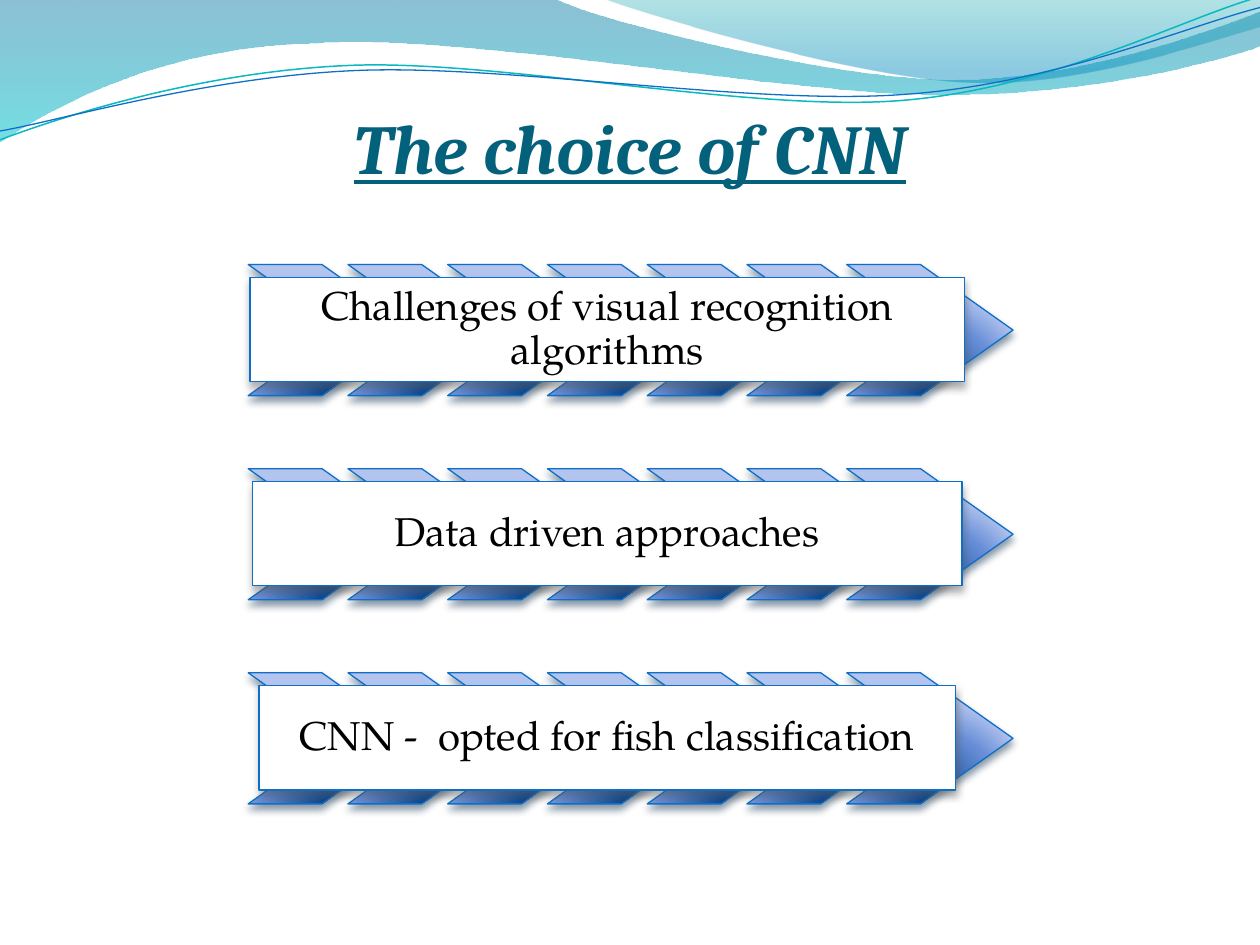
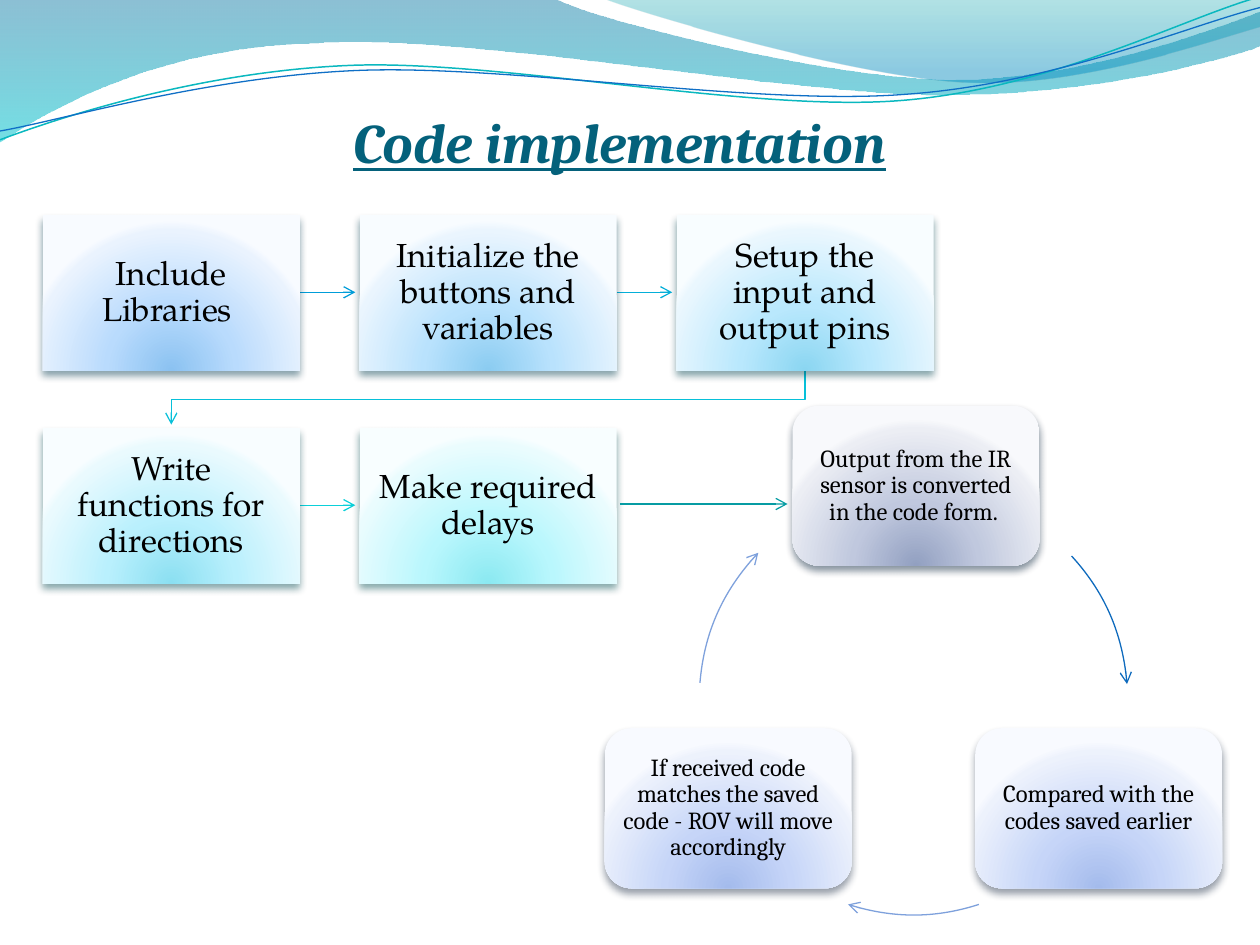
from math import cos, radians, sin, tan

from lxml.etree import SubElement
from pptx import Presentation
from pptx.dml.color import RGBColor
from pptx.enum.shapes import MSO_CONNECTOR, MSO_SHAPE
from pptx.enum.text import MSO_ANCHOR, MSO_AUTO_SIZE, PP_ALIGN
from pptx.oxml.ns import qn
from pptx.util import Inches, Pt

BLUE = "0F6FC6"
TEAL = "04617B"
SERIF = "Cambria"
BOOK = "TeX Gyre Pagella"
STEEL = [(0, "003D87"), (68, "668DD7"), (100, "B3C4EF")]

BANDS = [
    ((-0.01, -0.01, 10.02, 1.14),
     [(0, 0), (4.4, -0.01), (4.76, 0.17, 6.64, 0.63, 7.58, 0.63),
      (8.53, 0.63, 9.58, 0.26, 10, 0.09), (10.01, 0.36),
      (9.83, 0.44, 8.7, 0.76, 7.46, 0.75), (6.22, 0.75, 3.82, 0.28, 2.57, 0.34),
      (1.29, 0.36, 0.46, 0.83, -0.01, 1.13), (0, 0)],
     [(0, "0074A1", 45), (100, "00C6CF", 55)]),
    ((4.79, -0.01, 5.21, 0.7),
     [(4.79, -0.01), (5.09, 0.11, 6.82, 0.62, 7.69, 0.65),
      (8.56, 0.69, 9.61, 0.32, 10, 0.21), (10, 0), (4.79, -0.01)],
     [(0, "00A1A9", 30), (80, "008BBF", 45)]),
]
WAVES = [
    ((0, -0.02, 9.98, 1.13),
     [(0, 1.11), (0.48, 0.93, 1.58, 0.57, 2.77, 0.52),
      (3.95, 0.47, 5.93, 0.89, 7.13, 0.8), (8.33, 0.71, 9.38, 0.15, 9.98, -0.02)],
     "0AB8BF", 0.85),
    ((0, 0.06, 10, 0.98),
     [(0, 1.04), (0.47, 0.96, 1.64, 0.61, 2.83, 0.56),
      (4.03, 0.51, 5.97, 0.84, 7.17, 0.75), (8.36, 0.67, 9.41, 0.21, 10, 0.06)],
     BLUE, 0.75),
]
ROWS = [("Challenges of visual recognition algorithms", 5.67),
        ("Data driven approaches", 5.63),
        ("CNN -  opted for fish classification", 5.53)]
STEPS = [
    ("Include Libraries ", ("8BC2F1", "B9DBFD", "EAF3FE", "F8FBFF"), "00374C", "009DD9"),
    ("Initialize the buttons and variables",
     ("8BCCF1", "B9E2FD", "EAF5FE", "F8FCFF"), "003C4D", "04AFD9"),
    ("Setup the input and output pins",
     ("8BD6F1", "B9E8FD", "EAF7FE", "F8FDFF"), "00424E", "07C0D9"),
    ("Write functions for directions",
     ("8BDFF1", "B9F0FD", "EAFAFE", "F8FDFF"), "01464E", "0BD0D9"),
    ("Make required delays", ("8BE9F1", "B9F7FD", "EAFCFE", "F8FEFF"), "024B4E", None),
]
PALE = ("A4BBEC", "C6D5F8", "EDF2FC", "F8FAFF")
STAGES = [
    ("Output from the IR sensor is converted in the code form. ",
     ("92A0C1", "C0C8DE", "ECEEF4", "F8F9FC"), "031D35", (0.74, -0.64),
     (-42.4, -4.4), "0E6ABD"),
    ("Compared with the codes saved earlier", PALE, "26354C", (2.19, 1.92),
     (72.2, 107.8), "7EA1DC"),
    ("If received code matches the saved code - ROV will move accordingly",
     PALE, "26354C", (-0.75, 1.92), (184.7, 223.6), "7EA1DC"),
]


def rgb(code):
    """Turn a hex string into a colour."""
    return RGBColor.from_string(code)


def tint(parent, code, alpha=100):
    """Add a colour with its opacity to an XML element."""
    node = SubElement(parent, qn("a:srgbClr"), val=code)
    if alpha < 100:
        SubElement(node, qn("a:alpha"), val=str(alpha * 1000))


def blend(shape, stops, glow=True):
    """Fill a shape with a glow from below or a downward gradient."""
    shape.fill.gradient()
    node = shape.element.spPr.find(qn("a:gradFill"))
    node.clear()
    node.set("rotWithShape", "1")
    group = SubElement(node, qn("a:gsLst"))
    for place, *colour in stops:
        tint(SubElement(group, qn("a:gs"), pos=str(place * 1000)), *colour)
    if glow:
        way = SubElement(node, qn("a:path"), path="circle")
        SubElement(way, qn("a:fillToRect"), l="50000", t="130000", r="50000", b="-30000")
    else:
        SubElement(node, qn("a:lin"), ang="5400000", scaled="1")


def soft(stops):
    """Place four pale colours along a glow."""
    return list(zip((0, 43, 93, 100), stops))


def shade(shape, code):
    """Give a shape a soft shadow below it."""
    shape.shadow.inherit = False
    group = shape.element.spPr.find(qn("a:effectLst"))
    node = SubElement(group, qn("a:outerShdw"), blurRad=str(Pt(4.5)), dist=str(Pt(3)),
                      dir="5400000", algn="ctr", rotWithShape="0")
    tint(node, code, 48)


def stroke(shape, code, width=0.75, arrow=False):
    """Set the line of a shape, with an arrowhead if asked."""
    shape.line.color.rgb = rgb(code)
    shape.line.width = Pt(width)
    if arrow:
        SubElement(shape.element.spPr.find(qn("a:ln")), qn("a:tailEnd"), type="arrow")


def outline(slide, box, parts, close=False):
    """Draw line ends and cubic curves, given in inches, within a box."""
    left, top, width, height = [Inches(v) for v in box]
    maker = slide.shapes.build_freeform(left, top)
    maker.add_line_segments([(left + width, top + height)], close=False)
    shape = maker.convert_to_shape()
    shape.shadow.inherit = False
    shape.fill.background()
    route = next(shape.element.iter(qn("a:path")))
    for node in list(route):
        route.remove(node)
    for i, part in enumerate(parts):
        kind = "a:cubicBezTo" if len(part) == 6 else "a:lnTo" if i else "a:moveTo"
        node = SubElement(route, qn(kind))
        for x, y in zip(part[::2], part[1::2]):
            SubElement(node, qn("a:pt"), x=str(Inches(x) - left), y=str(Inches(y) - top))
    if close:
        SubElement(route, qn("a:close"))
    return shape


def block(slide, kind, left, top, width, height):
    """Add a preset shape without a line."""
    shape = slide.shapes.add_shape(kind, *[Inches(v) for v in (left, top, width, height)])
    shape.line.fill.background()
    return shape


def label(shape, text, size, face, inset):
    """Write centred text in a shape."""
    frame = shape.text_frame
    frame.word_wrap = True
    frame.vertical_anchor = MSO_ANCHOR.MIDDLE
    frame.margin_left = frame.margin_right = Inches(inset)
    frame.margin_top = frame.margin_bottom = Inches(inset)
    para = frame.paragraphs[0]
    para.text = text
    para.alignment = PP_ALIGN.CENTER
    para.line_spacing = 0.9
    para.font.size = Pt(size)
    para.font.name = face
    para.font.color.rgb = rgb("000000")


def header(slide, layout):
    """Draw the waves on a slide and move them to its layout."""
    for box, parts, stops in BANDS:
        band = outline(slide, box, parts, close=True)
        blend(band, stops, glow=False)
        band.line.fill.background()
        layout.shapes.element.append(band.element)
    for box, parts, code, width in WAVES:
        wave = outline(slide, box, parts)
        stroke(wave, code, width)
        layout.shapes.element.append(wave.element)


def title(slide, text, left, top, size):
    """Place and style the slide title."""
    shape = slide.shapes.title
    shape.left, shape.top = Inches(left), Inches(top)
    shape.width, shape.height = Inches(9), Inches(1.25)
    frame = shape.text_frame
    frame.auto_size = MSO_AUTO_SIZE.NONE
    frame.vertical_anchor = MSO_ANCHOR.BOTTOM
    frame.margin_left = frame.margin_right = frame.margin_bottom = 0
    frame.margin_top = Inches(0.05)
    para = frame.paragraphs[0]
    para.text = text
    para.alignment = PP_ALIGN.CENTER
    font = para.font
    font.size, font.name = Pt(size), SERIF
    font.bold = font.italic = font.underline = True
    font.color.rgb = rgb(TEAL)


def banner(slide, text, width, left, top):
    """Draw a row of chevrons behind a white caption."""
    for i in range(7):
        shape = block(slide, MSO_SHAPE.CHEVRON, left + i * 4.75 / 6, top, 1.32, 1.04)
        shape.adjustments[0] = 0.706
        blend(shape, STEEL)
        stroke(shape, BLUE)
        shade(shape, "042747")
    plate = block(slide, MSO_SHAPE.RECTANGLE, left + 2.85 - width / 2, top + 0.1, width, 0.83)
    plate.fill.solid()
    plate.fill.fore_color.rgb = rgb("FFFFFF")
    stroke(plate, BLUE)
    shade(plate, "5A5A5A")
    label(plate, text, 23, BOOK, 0.06)


def flow(slide, left, top):
    """Draw the steps three to a row, joined by arrows."""
    width, height = 2.04, 1.23
    for i, (text, stops, dark, code) in enumerate(STEPS):
        row, col = divmod(i, 3)
        x, y = left + col * 2.515, top + row * 1.69
        if col == 2:
            mid, back, base = x + width / 2, left + width / 2, y + height - 0.01
            fold = base + 0.24
            link = outline(slide, (back, base, mid - back, 0.44),
                           [(mid, base), (mid, fold), (back, fold), (back, base + 0.44)])
            stroke(link, code, arrow=True)
        elif code:
            edge, level = x + width, y + 0.61
            link = outline(slide, (edge, level - 0.05, 0.44, 0.1),
                           [(edge, level), (edge + 0.44, level)])
            stroke(link, code, arrow=True)
        shape = block(slide, MSO_SHAPE.RECTANGLE, x, y, width, height)
        blend(shape, soft(stops))
        shade(shape, dark)
        label(shape, text, 19, BOOK, 0.15)


def bow(left, top, size, start, end):
    """Find the curve between two angles of the circle in a box."""
    reach = size / 2
    pull = 4 / 3 * tan(radians(end - start) / 4)

    def spot(angle, bend):
        """Find a point of the circle, moved along its tangent."""
        turn = radians(angle)
        return (left + reach * (1 + cos(turn) - bend * sin(turn)),
                top + reach * (1 + sin(turn) + bend * cos(turn)))

    return [spot(start, 0), spot(start, pull) + spot(end, -pull) + spot(end, 0)]


def cycle(slide, left, top, size):
    """Draw the stages around a circle, joined by arcs."""
    for text, stops, dark, (x, y), (start, end), code in STAGES:
        shape = block(slide, MSO_SHAPE.ROUNDED_RECTANGLE, left + x, top + y, 1.96, 1.27)
        blend(shape, soft(stops))
        shade(shape, dark)
        label(shape, text, 14, SERIF, 0.06)
        arc = outline(slide, (left, top, size, size), bow(left, top, size, start, end))
        stroke(arc, code, arrow=True)


def bridge(slide, start, end, code):
    """Draw the arrow from the steps to the cycle."""
    line = slide.shapes.add_connector(
        MSO_CONNECTOR.STRAIGHT, *[Inches(v) for v in (*start, *end)])
    stroke(line, code, arrow=True)
    SubElement(line.element.spPr, qn("a:effectLst"))


def main():
    """Build both slides and save them."""
    deck = Presentation()
    deck.slide_width, deck.slide_height = Inches(10), Inches(7.5)
    layout = deck.slide_layouts[5]

    choice = deck.slides.add_slide(layout)
    header(choice, layout)
    title(choice, "The choice of CNN", 0.5, 0.25, 40)
    for i, (text, width) in enumerate(ROWS):
        banner(choice, text, width, 1.97, 2.1 + i * 1.62)

    code = deck.slides.add_slide(layout)
    title(code, "Code implementation", 0.42, 0.14, 32)
    flow(code, 0.34, 1.71)
    cycle(code, 5.55, 3.86, 3.4)
    bridge(code, (4.92, 4), (6.25, 4), "069CA3")
    deck.save("out.pptx")


if __name__ == "__main__":
    main()
